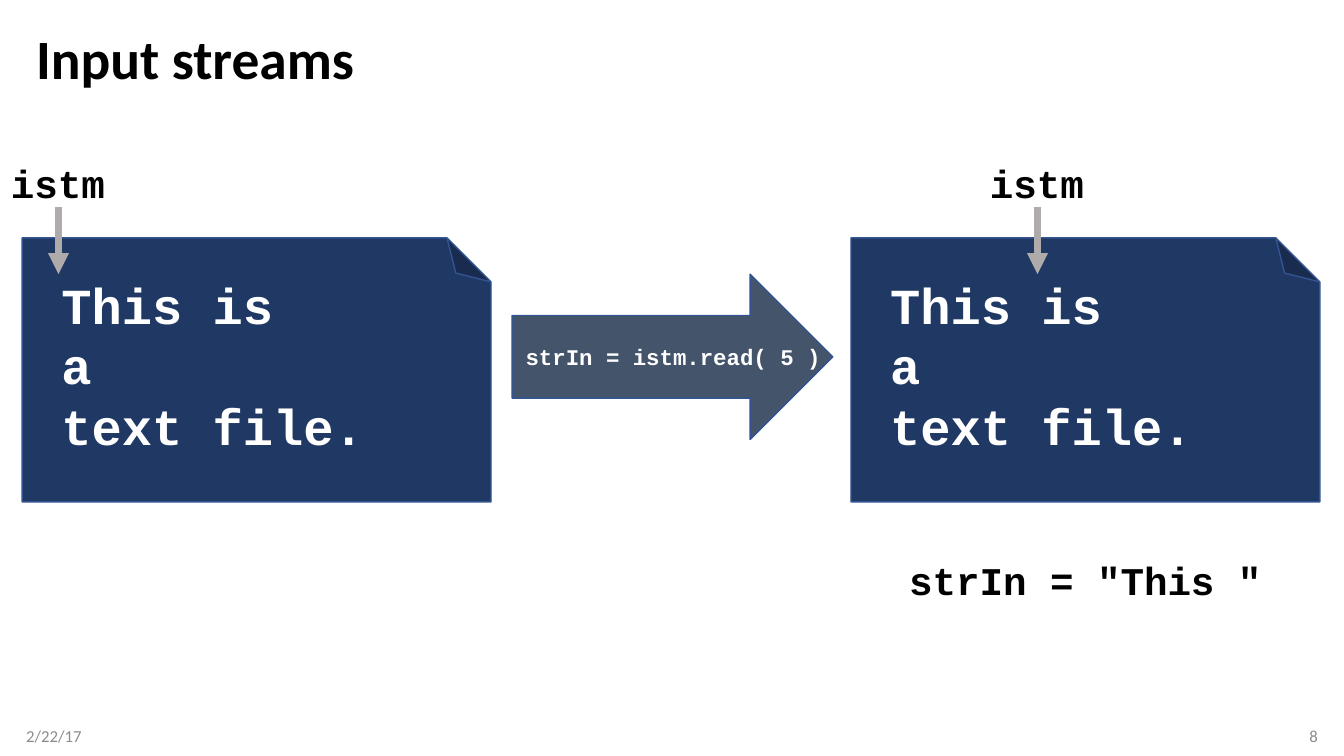
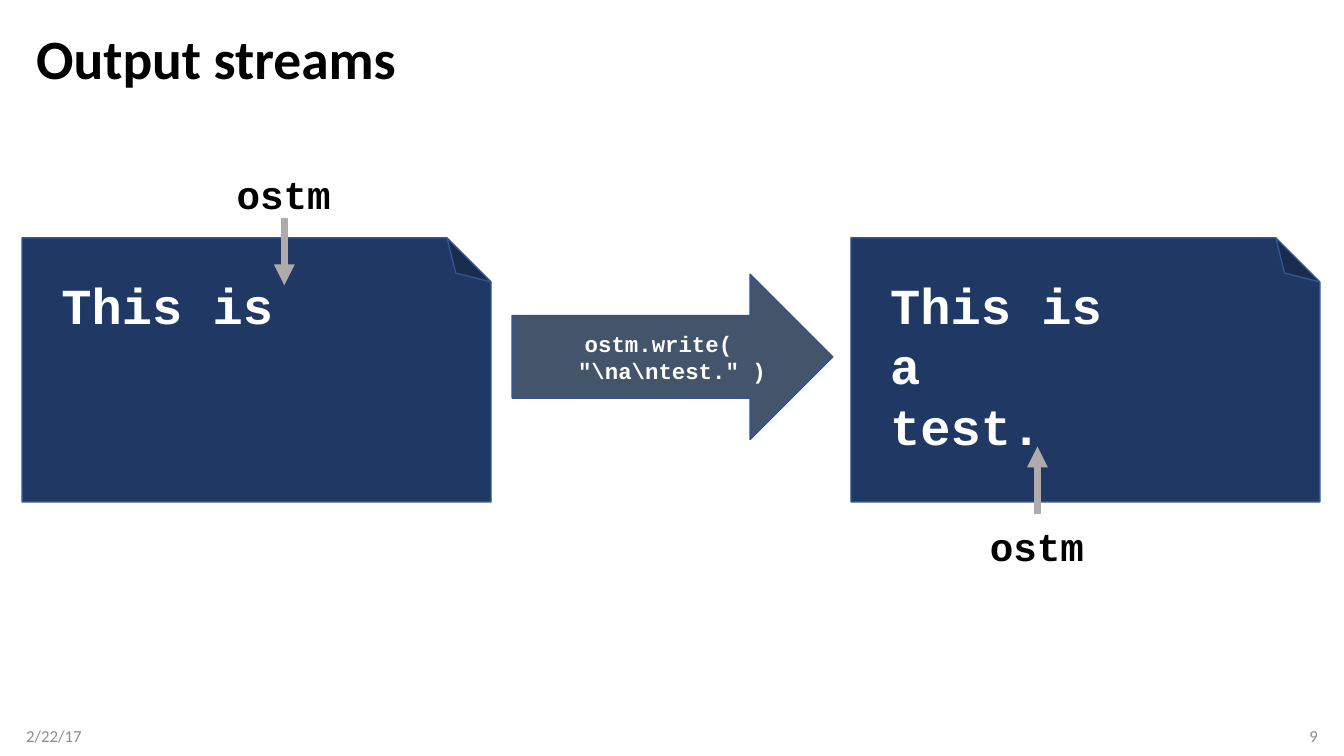
from dataclasses import dataclass

from lxml.etree import SubElement as Sub
from pptx import Presentation
from pptx.dml.color import RGBColor as RGB
from pptx.enum.shapes import MSO_CONNECTOR as Line, MSO_SHAPE as Shape
from pptx.enum.text import MSO_ANCHOR as Anchor, MSO_AUTO_SIZE as Fit, PP_ALIGN as Align
from pptx.oxml.ns import qn
from pptx.util import Inches, Pt


@dataclass(frozen=True)
class Theme:
    ink: str = "000000"
    pale: str = "FFFFFF"
    mute: str = "8C8C8C"
    page: str = "203864"
    edge: str = "325491"
    flow: str = "44546A"
    mark: str = "AFABAB"
    sans: str = "Calibri"
    mono: str = "Courier New"
    title: float = 39.6
    body: float = 36
    label: float = 28
    call: float = 16
    foot: float = 12


T = Theme()


def box(*sides):
    return [Inches(n) for n in sides]


def write(frame, text, size, color, font=T.mono, bold=True, align=Align.LEFT):
    frame.text = text
    for para in frame.paragraphs:
        para.alignment = align
        for run in para.runs:
            run.font.name, run.font.size, run.font.bold = font, Pt(size), bold
            run.font.color.rgb = RGB.from_string(color)


def pad(frame, left, top, right, base):
    frame.margin_left, frame.margin_top, frame.margin_right, frame.margin_bottom = box(
        left, top, right, base)


def form(shapes, kind, area, fill):
    shape = shapes.add_shape(kind, *box(*area))
    shape.shadow.inherit = False
    shape.fill.solid()
    shape.fill.fore_color.rgb = RGB.from_string(fill)
    shape.line.color.rgb = RGB.from_string(T.edge)
    shape.line.width = Pt(1)
    return shape


def code(shapes, text, area, size, color, align=Align.LEFT):
    """Monospaced text that does not wrap."""
    frame = shapes.add_textbox(*box(*area)).text_frame
    write(frame, text, size, color, align=align)
    frame.word_wrap = False
    frame.auto_size = Fit.SHAPE_TO_FIT_TEXT


# Title and footer
def base(deck, title, number):
    slide = deck.slides.add_slide(deck.slide_layouts[6])
    frame = slide.shapes.add_textbox(*box(0.26, 0.25, 12.81, 0.72)).text_frame
    frame.word_wrap = True
    frame.vertical_anchor = Anchor.MIDDLE
    write(frame, title, T.title, T.ink, T.sans)
    frame.paragraphs[0].line_spacing = 0.9
    for left, text, align, ins in ((0.26, "2/22/17", Align.LEFT, (0, 0.1)),
                                   (10.07, str(number), Align.RIGHT, (0.1, 0))):
        frame = slide.shapes.add_textbox(*box(left, 7.1, 3, 0.4)).text_frame
        frame.word_wrap = True
        frame.vertical_anchor = Anchor.MIDDLE
        pad(frame, ins[0], 0.05, ins[1], 0.05)
        write(frame, text, T.foot, T.mute, T.sans, False, align)
    return slide


# File page with its content, sized by the text
def sheet(slide, text, left, top=2.36):
    group = slide.shapes.add_group_shape().shapes
    page = form(group, Shape.FOLDED_CORNER, (left, top, 4.65, 2.62), T.page)
    page.element.spPr.find(qn("a:xfrm")).set("flipV", "1")
    lines = text.split("\n")
    wide = 0.3 * max(map(len, lines)) + 0.22
    code(group, text, (left + 0.29, top + 0.31, wide, 0.6 * len(lines) + 0.11),
         T.body, T.pale)


# Stream name with a pointer into the file
def mark(slide, name, x, top, up=False):
    start = top - 0.03 if up else top + 0.52
    end = start + (-0.67 if up else 0.67)
    line = slide.shapes.add_connector(Line.STRAIGHT, *box(x, start, x, end))
    line.line.color.rgb = RGB.from_string(T.mark)
    line.line.width = Pt(5)
    Sub(line.line._get_or_add_ln(), qn("a:tailEnd"), type="triangle")
    Sub(line.element.spPr, qn("a:effectLst"))
    code(slide.shapes, name, (x - 0.57, top, 1.14, 0.57), T.label, T.ink)


# Call shown in the large arrow between the files
def flow(slide, text, align, left=5.08, top=2.72):
    arrow = form(slide.shapes, Shape.RIGHT_ARROW, (left, top, 3.18, 1.64), T.flow)
    frame = arrow.text_frame
    pad(frame, 0, 0, 0, 0)
    frame.word_wrap = False
    frame.vertical_anchor = Anchor.MIDDLE
    write(frame, text, T.call, T.pale, align=align)
    for para in frame.paragraphs[1:]:
        para._p.get_or_add_pPr().set("marL", str(Inches(0.4)))


def reads(deck):
    slide = base(deck, "Input streams", 8)
    for left, x in ((0.22, 0.58), (8.44, 10.29)):
        sheet(slide, "This is\na\ntext file.", left)
        mark(slide, "istm", x, 1.53)
    flow(slide, " strIn = istm.read( 5 )", Align.LEFT)
    code(slide.shapes, 'strIn = "This "', (8.9, 5.47, 3.73, 0.57),
         T.label, T.ink, Align.CENTER)


def writes(deck):
    slide = base(deck, "Output streams", 9)
    sheet(slide, "This is", 0.22)
    mark(slide, "ostm", 2.82, 1.64)
    flow(slide, ' ostm.write(\n"\\na\\ntest." )', Align.CENTER)
    sheet(slide, "This is\na\ntest.", 8.44)
    mark(slide, "ostm", 10.29, 5.13, up=True)


def main():
    deck = Presentation()
    deck.slide_width, deck.slide_height = box(13.33, 7.5)
    reads(deck)
    writes(deck)
    deck.save("out.pptx")


if __name__ == "__main__":
    main()
